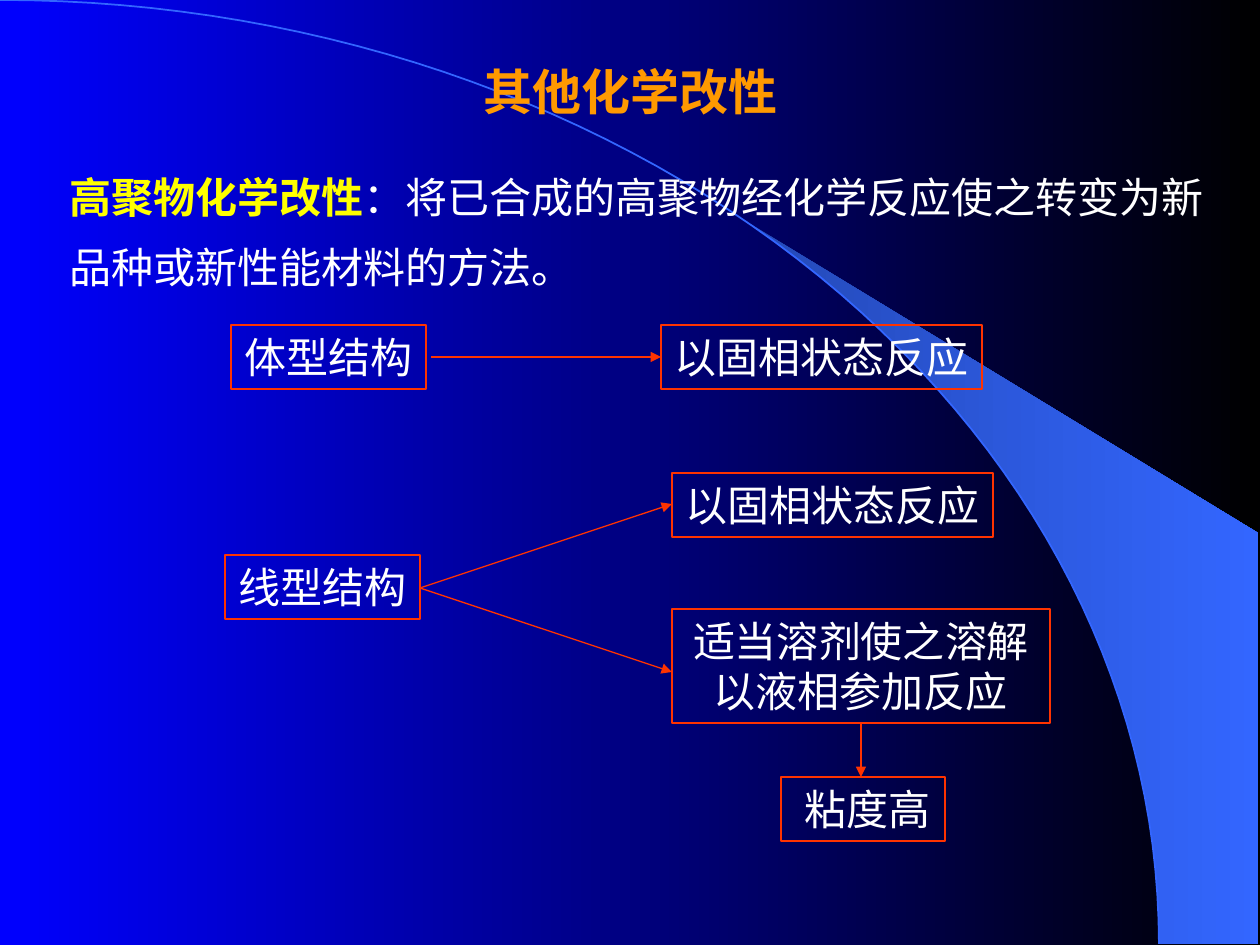
from math import asin, cos, pi, sin

from lxml.etree import SubElement
from pptx import Presentation
from pptx.dml.color import RGBColor
from pptx.enum.shapes import MSO_CONNECTOR as Connector, MSO_SHAPE as Shape
from pptx.enum.text import MSO_ANCHOR as Anchor, MSO_AUTO_SIZE as AutoSize, PP_ALIGN as Align
from pptx.oxml.ns import qn
from pptx.util import Pt

EMU_PER_PX = 914400 / 126
FONT = "Times New Roman"
WHITE, YELLOW, ORANGE, RED, BLUE = "FFFFFF", "FFFF00", "FF9900", "FF3300", "3366FF"

TITLE = "其他化学改性"
TITLE_AREA = (471, 55, 387, 72)
TERM = "高聚物化学改性"
DEFINITION = "：将已合成的高聚物经化学反应使之转变为新品种或新性能材料的方法。"
DEFINITION_AREA = (57, 145, 1169, 154)

LINE_HEIGHT = 64
BOXES = [  # text, left, top, width, lines
    ("体型结构", 231, 325, 195, 1),
    ("以固相状态反应", 661, 325, 321, 1),
    ("线型结构", 225, 555, 195, 1),
    ("以固相状态反应", 672, 473, 321, 1),
    ("适当溶剂使之溶解以液相参加反应", 672, 609, 378, 2),
    (" 粘度高", 781, 777, 164, 1),
]
LINE_STEP = 50
ARROWS = [  # start x, start y, end x, end y
    (431, 357, 661, 357),
    (420, 588, 672, 504),
    (420, 588, 672, 672),
    (861, 724, 861, 777),
]

ARC_WIDTH, ARC_HEIGHT = 1159, 944
SWOOSH_LEFT, SWOOSH_RIGHT, SWOOSH_TOP_RIGHT = 742, 1258, 533
ARC_STEPS = 60


def px(length):
    return round(length * EMU_PER_PX)


def rgb(hex_color):
    return RGBColor.from_string(hex_color)


def place(shape, area):
    shape.left, shape.top, shape.width, shape.height = map(px, area)


def style_run(run, size, color, bold=False):
    run.font.name, run.font.size, run.font.bold = FONT, Pt(size), bold
    run.font.color.rgb = rgb(color)


def style_line(line, color, width):
    line.color.rgb = rgb(color)
    line.width = Pt(width)


def fill_gradient(fill, *colors):
    """Blend two colours from left to right."""
    fill.gradient()
    fill.gradient_angle = 0
    for stop, color in zip(fill.gradient_stops, colors):
        stop.color.rgb = rgb(color)


def arc_points(start_angle):
    """Points on the quarter ellipse, from start_angle down to the bottom edge."""
    angles = (start_angle + (pi / 2 - start_angle) * i / ARC_STEPS for i in range(ARC_STEPS + 1))
    return [(ARC_WIDTH * sin(a), ARC_HEIGHT * (1 - cos(a))) for a in angles]


def add_backdrop(slide, points, close):
    """Add an outline behind everything already on the slide."""
    start, *rest = [(px(x), px(y)) for x, y in points]
    builder = slide.shapes.build_freeform(*start)
    builder.add_line_segments(rest, close=close)
    outline = builder.convert_to_shape()
    outline.shadow.inherit = False
    slide.shapes._spTree.insert(2, outline._element)
    return outline


def add_box(slide, text, left, top, width, lines):
    height = LINE_HEIGHT + LINE_STEP * (lines - 1)
    box = slide.shapes.add_shape(Shape.RECTANGLE, *map(px, (left, top, width, height)))
    box.shadow.inherit = False
    box.fill.background()
    style_line(box.line, RED, 0.75)
    frame = box.text_frame
    frame.text = text
    frame.word_wrap = lines > 1
    frame.vertical_anchor = Anchor.MIDDLE
    paragraph = frame.paragraphs[0]
    paragraph.alignment = Align.CENTER
    style_run(paragraph.runs[0], 24, WHITE)


def add_arrow(slide, ends):
    arrow = slide.shapes.add_connector(Connector.STRAIGHT, *map(px, ends))
    style_line(arrow.line, RED, 0.75)
    SubElement(arrow.line._ln, qn("a:tailEnd"), type="triangle")
    SubElement(arrow._element.spPr, qn("a:effectLst"))


def fill_placeholder(placeholder, area, runs, size):
    """Write (text, colour, bold) runs as one left-aligned, unbulleted paragraph."""
    place(placeholder, area)
    frame = placeholder.text_frame
    frame.auto_size, frame.word_wrap = AutoSize.NONE, True
    frame.vertical_anchor = Anchor.TOP
    paragraph = frame.paragraphs[0]
    paragraph.alignment = Align.LEFT
    paragraph.space_before = Pt(0)
    for text, color, bold in runs:
        run = paragraph.add_run()
        run.text = text
        style_run(run, size, color, bold)
    return paragraph


def main():
    deck = Presentation()
    deck.slide_width, deck.slide_height = px(1260), px(945)
    slide = deck.slides.add_slide(deck.slide_layouts[1])
    fill_gradient(slide.background.fill, "0000FF", "000000")

    title, body = slide.placeholders
    fill_placeholder(title, TITLE_AREA, [(TITLE, ORANGE, True)], 28)
    definition = fill_placeholder(
        body, DEFINITION_AREA, [(TERM, YELLOW, True), (DEFINITION, WHITE, False)], 24)
    definition.line_spacing = 1.4
    properties = definition._p.get_or_add_pPr()
    properties.set("marL", "0")
    properties.set("indent", "0")
    SubElement(properties, qn("a:buNone"))

    arc = add_backdrop(slide, arc_points(0), close=False)
    arc.fill.background()
    style_line(arc.line, BLUE, 1)

    corners = [(SWOOSH_RIGHT, ARC_HEIGHT), (SWOOSH_RIGHT, SWOOSH_TOP_RIGHT)]
    swoosh = add_backdrop(slide, arc_points(asin(SWOOSH_LEFT / ARC_WIDTH)) + corners, close=True)
    fill_gradient(swoosh.fill, "2449B6", BLUE)
    swoosh.line.fill.background()

    for box in BOXES:
        add_box(slide, *box)
    for ends in ARROWS:
        add_arrow(slide, ends)
    deck.save("out.pptx")


if __name__ == "__main__":
    main()
